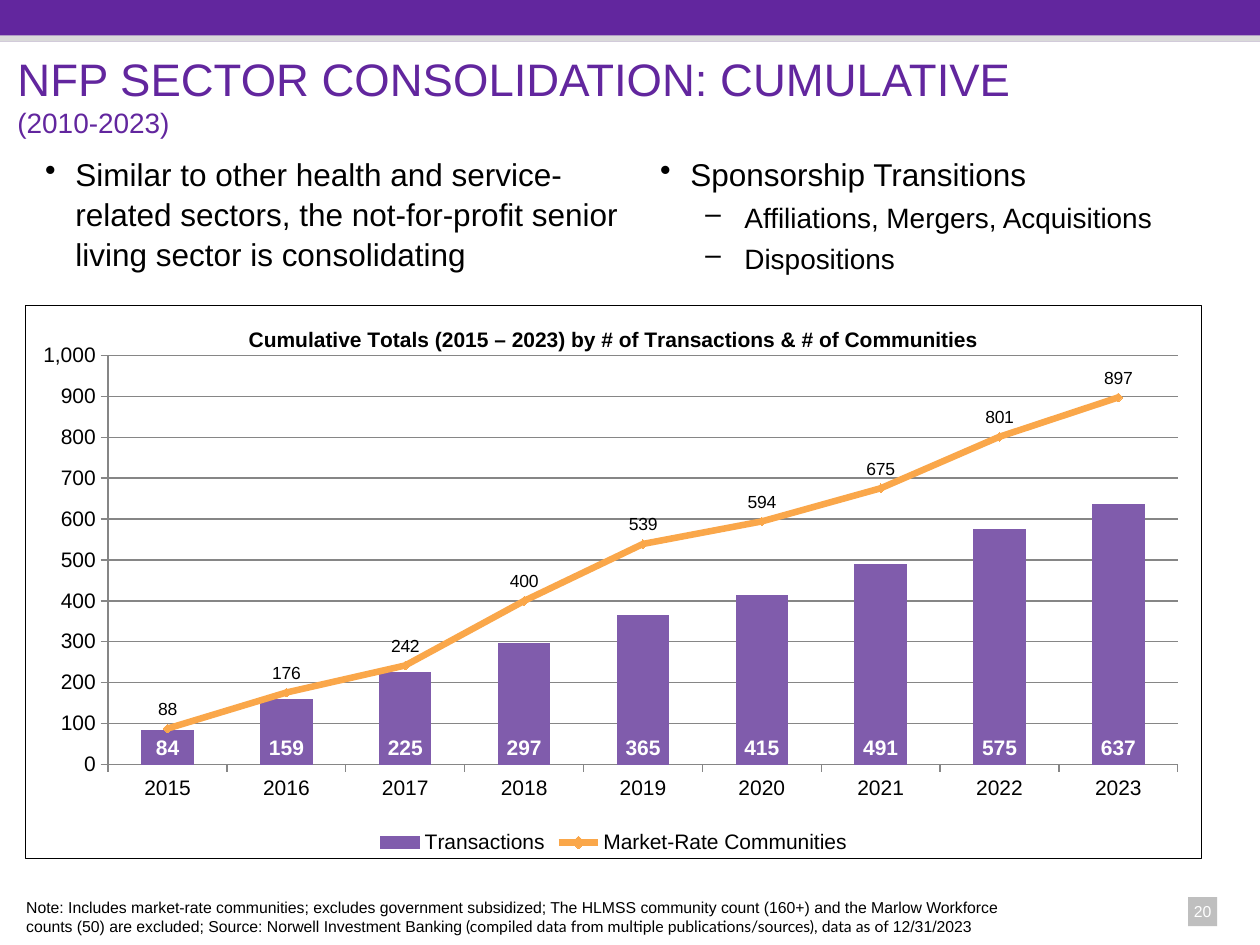
from pptx import Presentation
from pptx.chart.data import CategoryChartData
from pptx.dml.color import RGBColor
from pptx.enum.chart import (XL_CHART_TYPE, XL_LABEL_POSITION, XL_LEGEND_POSITION,
                             XL_MARKER_STYLE, XL_TICK_LABEL_POSITION, XL_TICK_MARK)
from pptx.enum.shapes import MSO_SHAPE
from pptx.enum.text import MSO_ANCHOR, PP_ALIGN
from pptx.oxml import parse_xml
from pptx.oxml.ns import nsdecls, qn
from pptx.util import Inches, Pt

RECTANGLE = MSO_SHAPE.RECTANGLE
COLUMNS_CHART = XL_CHART_TYPE.COLUMN_CLUSTERED
LEGEND_BOTTOM = XL_LEGEND_POSITION.BOTTOM
INSIDE_BASE, ABOVE = XL_LABEL_POSITION.INSIDE_BASE, XL_LABEL_POSITION.ABOVE
DIAMOND = XL_MARKER_STYLE.DIAMOND
LOW_LABELS = XL_TICK_LABEL_POSITION.LOW
TICK_OUT, TICK_NONE = XL_TICK_MARK.OUTSIDE, XL_TICK_MARK.NONE
TOP, BOTTOM = MSO_ANCHOR.TOP, MSO_ANCHOR.BOTTOM
LEFT, CENTER = PP_ALIGN.LEFT, PP_ALIGN.CENTER

COLORS = {"purple": "62269E", "strip": "D9D9D9", "badge": "BFBFBF", "white": "FFFFFF",
          "black": "000000", "bar": "805CAC", "line": "FAA74A", "axis": "868686"}
GRID_COLUMNS, GRID_ROWS = 100, 75
# Bullet character, text indent, hanging part (inches) and text size by level
BULLETS = [("•", 0.38, 0.24, 18), ("–", 0.81, 0.31, 16)]

YEARS = [str(year) for year in range(2015, 2024)]
TRANSACTIONS = [84, 159, 225, 297, 365, 415, 491, 575, 637]
COMMUNITIES = [88, 176, 242, 400, 539, 594, 675, 801, 897]


def color(name):
    return RGBColor.from_string(COLORS[name])


def apply(target, **values):
    for name, value in values.items():
        setattr(target, name, value)


class SlideBuilder:
    """Holds the presentation, its text style and the current slide."""

    font_name = "Arial"

    def __init__(self):
        self.presentation = Presentation()
        apply(self.presentation, slide_width=Inches(10), slide_height=Inches(7.5))
        self.slide = self.presentation.slides.add_slide(self.presentation.slide_layouts[6])

    def area(self, column, row, columns, rows):
        """Turn grid lengths into left, top, width and height."""
        across = self.presentation.slide_width / GRID_COLUMNS
        down = self.presentation.slide_height / GRID_ROWS
        return [round(length) for length in
                (column * across, row * down, columns * across, rows * down)]

    def style(self, font, size, color_name="black", name=None, bold=False):
        apply(font, size=Pt(size), name=name or self.font_name, bold=bold)
        font.color.rgb = color(color_name)

    def rectangle(self, area, fill):
        shape = self.slide.shapes.add_shape(RECTANGLE, *self.area(*area))
        shape.shadow.inherit = False
        shape.fill.solid()
        shape.fill.fore_color.rgb = color(fill)
        shape.line.fill.background()

    def text_frame(self, area, anchor=TOP):
        frame = self.slide.shapes.add_textbox(*self.area(*area)).text_frame
        apply(frame, word_wrap=True, vertical_anchor=anchor)
        return frame

    def text(self, area, runs, anchor=TOP, align=LEFT):
        """Write one paragraph of (text, style) runs; None stands for a line break."""
        paragraph = self.text_frame(area, anchor).paragraphs[0]
        paragraph.alignment = align
        for item in runs:
            if item is None:
                paragraph.add_line_break()
                continue
            run = paragraph.add_run()
            run.text = item[0]
            self.style(run.font, **item[1])

    def bullets(self, area, items):
        frame = self.text_frame(area)
        for index, (level, text) in enumerate(items):
            paragraph = frame.add_paragraph() if index else frame.paragraphs[0]
            character, indent, hanging, size = BULLETS[level]
            apply(paragraph, level=level, line_spacing=1.05,
                  space_before=Pt(0.2 * size if index else 0))
            properties = paragraph._p.get_or_add_pPr()
            properties.set("marL", str(Inches(indent)))
            properties.set("indent", str(-Inches(hanging)))
            properties.append(parse_xml(f'<a:buChar {nsdecls("a")} char="{character}"/>'))
            run = paragraph.add_run()
            run.text = text
            self.style(run.font, size)

    def chart(self, area, title, categories, bars, line):
        data = CategoryChartData()
        data.categories = categories
        for name, values in (bars, line):
            data.add_series(name, values)
        chart = self.slide.shapes.add_chart(COLUMNS_CHART, *self.area(*area), data).chart
        self.style(chart.font, 12)
        move_last_series_to_line(chart)
        frame_chart(chart)

        chart.has_title = True
        run = chart.chart_title.text_frame.paragraphs[0].add_run()
        run.text = title
        self.style(run.font, 12, bold=True)
        chart.has_legend = True
        apply(chart.legend, position=LEGEND_BOTTOM, include_in_layout=False)
        self.style(chart.legend.font, 12)

        for axis in (chart.category_axis, chart.value_axis):
            apply(axis, major_tick_mark=TICK_OUT, minor_tick_mark=TICK_NONE)
            axis.format.line.color.rgb = color("axis")
            self.style(axis.tick_labels.font, 12)
        chart.category_axis.tick_label_position = LOW_LABELS
        apply(chart.value_axis, minimum_scale=0, maximum_scale=1000, major_unit=100)
        apply(chart.value_axis.tick_labels, number_format="#,##0",
              number_format_is_linked=False)
        chart.value_axis.major_gridlines.format.line.color.rgb = color("axis")

        bar_plot, line_plot = chart.plots
        apply(bar_plot, gap_width=127, vary_by_categories=False)
        bar_series, line_series = bar_plot.series[0], line_plot.series[0]
        line_series.smooth = False
        line_series.format.line.width = Pt(3.75)
        line_series.format.line.color.rgb = color("line")
        apply(line_series.marker, style=DIAMOND, size=5)
        line_series.marker.format.line.color.rgb = color("line")
        for part, name in ((bar_series, "bar"), (line_series.marker, "line")):
            part.format.fill.solid()
            part.format.fill.fore_color.rgb = color(name)
        self.labels(bar_series, INSIDE_BASE, size=12, color_name="white", bold=True)
        self.labels(line_series, ABOVE, size=10)

    def labels(self, series, position, **style):
        apply(series.data_labels, show_value=True, position=position,
              number_format="#,##0", number_format_is_linked=False)
        self.style(series.data_labels.font, **style)


def move_last_series_to_line(chart):
    """Draw the last bar series as a line on the same axes."""
    bar_chart = chart.element.find(".//" + qn("c:barChart"))
    series = bar_chart.findall(qn("c:ser"))[-1]
    for flag in series.findall(qn("c:invertIfNegative")):
        series.remove(flag)
    line_chart = parse_xml(
        f'<c:lineChart {nsdecls("c")}><c:grouping val="standard"/>'
        '<c:varyColors val="0"/><c:marker val="1"/></c:lineChart>')
    line_chart.insert(2, series)
    for axis in bar_chart.findall(qn("c:axId")):
        line_chart.append(parse_xml(f'<c:axId {nsdecls("c")} val="{axis.get("val")}"/>'))
    bar_chart.addnext(line_chart)


def frame_chart(chart):
    """Place the plot and give the chart a white ground and a black border."""
    sizes = {"x": 0.07, "y": 0.09, "w": 0.91, "h": 0.74}
    shares = "".join(f'<c:{key} val="{share}"/>' for key, share in sizes.items())
    plot_area = chart.element.find(".//" + qn("c:plotArea"))
    for layout in plot_area.findall(qn("c:layout")):
        plot_area.remove(layout)
    plot_area.insert(0, parse_xml(
        f'<c:layout {nsdecls("c")}><c:manualLayout><c:layoutTarget val="inner"/>'
        f'<c:xMode val="edge"/><c:yMode val="edge"/>{shares}</c:manualLayout></c:layout>'))
    fill, border = (f'<a:solidFill><a:srgbClr val="{COLORS[name]}"/></a:solidFill>'
                    for name in ("white", "black"))
    chart.element.find(qn("c:txPr")).addprevious(parse_xml(
        f'<c:spPr {nsdecls("c", "a")}>{fill}<a:ln w="{Pt(0.75)}">{border}</a:ln></c:spPr>'))


def main():
    builder = SlideBuilder()
    builder.rectangle((94.3, 71.2, 2.3, 2.3), "badge")
    builder.text((90.9, 71.1, 9.1, 2.5), [("20", {"size": 9, "color_name": "white"})],
                 align=CENTER)
    builder.rectangle((0, 0, 100, 3.3), "purple")
    builder.rectangle((0, 2.8, 100, 0.5), "strip")
    heading = {"color_name": "purple"}
    builder.text((0.4, 2.3, 96.7, 9.2),
                 [("NFP SECTOR CONSOLIDATION: CUMULATIVE", {"size": 26, **heading}), None,
                  ("(2010-2023)", {"size": 16, **heading})], anchor=BOTTOM)
    builder.bullets((1.2, 11.7, 49.8, 11), [
        (0, "Similar to other health and service-related sectors, "
            "the not-for-profit senior living sector is consolidating")])
    builder.bullets((50, 11.7, 49.8, 11), [
        (0, "Sponsorship Transitions"),
        (1, "Affiliations, Mergers, Acquisitions"),
        (1, "Dispositions")])
    builder.chart((2, 24.2, 93.4, 44),
                  "Cumulative Totals (2015 – 2023) by # of Transactions & # of Communities",
                  YEARS, ("Transactions", TRANSACTIONS),
                  ("Market-Rate Communities", COMMUNITIES))
    builder.text((1.1, 70.8, 81.4, 4), [
        ("Note: Includes market-rate communities; excludes government subsidized; "
         "The HLMSS community count (160+) and the Marlow Workforce counts (50) are "
         "excluded; Source: Norwell Investment Banking", {"size": 9}),
        (" (compiled data from multiple publications/sources), data as of",
         {"size": 9, "name": "Lato"}),
        (" 12/31/2023", {"size": 9})])
    builder.presentation.save("out.pptx")


if __name__ == "__main__":
    main()
